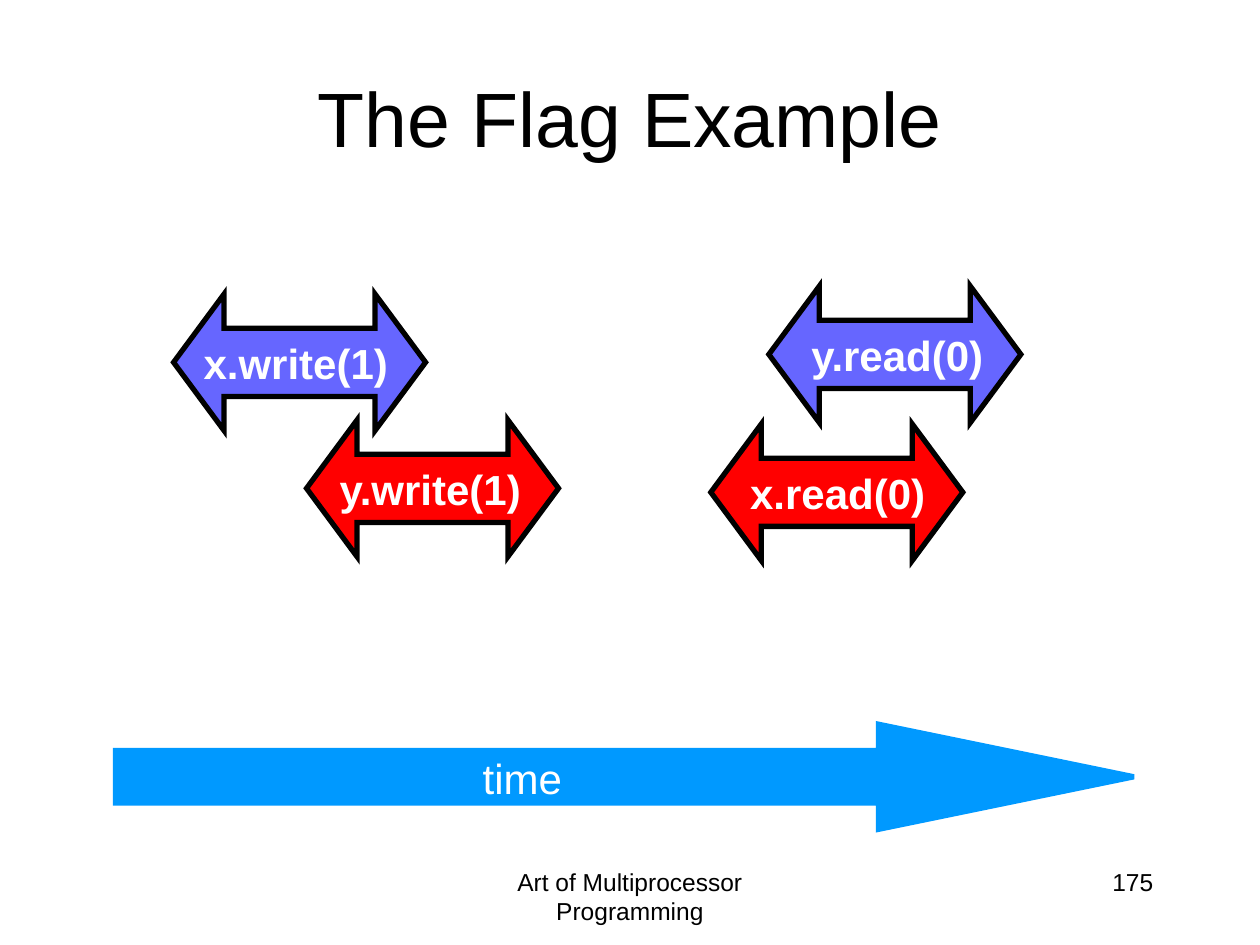
from dataclasses import dataclass

from lxml.etree import SubElement
from pptx import Presentation
from pptx.dml.color import RGBColor as Rgb
from pptx.enum.shapes import MSO_SHAPE as Shape
from pptx.enum.text import MSO_ANCHOR as Anchor, PP_ALIGN as Align
from pptx.oxml.ns import qn
from pptx.util import Cm, Pt


@dataclass(frozen=True)
class Theme:
    font: str = "Arial"
    dark: str = "000000"
    light: str = "FFFFFF"
    blue: str = "6666FF"
    red: str = "FF0000"
    sky: str = "0099FF"
    head: int = 44
    label: int = 24
    foot: int = 14
    edge: int = 3


THEME = Theme()


def place(item, box):
    item.left, item.top, item.width, item.height = map(Cm, box)


def write(item, text, size, color, align, bold=False, wrap=True, anchor=Anchor.TOP):
    frame = item.text_frame
    frame.text = text
    frame.word_wrap = wrap
    frame.vertical_anchor = anchor
    para = frame.paragraphs[0]
    para.alignment = align
    font = para.runs[0].font
    font.name, font.size, font.bold = THEME.font, Pt(size), bold
    font.color.rgb = Rgb.from_string(color)


def add_title(slide, text):
    title = slide.shapes.title
    place(title, (1.27, 0.76, 22.86, 3.18))
    write(title, text, THEME.head, THEME.dark, Align.CENTER, anchor=Anchor.MIDDLE)


def add_text(slide, text, box, size, color, align, wrap=True):
    item = slide.shapes.add_textbox(*map(Cm, box))
    write(item, text, size, color, align, wrap=wrap)


def add_arrow(slide, kind, box, ratios, fill, edge):
    arrow = slide.shapes.add_shape(kind, *map(Cm, box))
    arrow.shadow.inherit = False
    for i, ratio in enumerate(ratios):
        arrow.adjustments[i] = ratio
    arrow.fill.solid()
    arrow.fill.fore_color.rgb = Rgb.from_string(fill)
    arrow.line.color.rgb = Rgb.from_string(edge)
    arrow.line.width = Pt(THEME.edge)
    SubElement(arrow.line._get_or_add_ln(), qn("a:miter"), lim="800000")
    return arrow


def add_call(slide, text, left, top, fill):
    box = (left, top, 5.08, 2.75)
    arrow = add_arrow(slide, Shape.LEFT_RIGHT_ARROW, box, (0.5, 0.37), fill, THEME.dark)
    write(arrow, text, THEME.label, THEME.light, Align.RIGHT, True, False, Anchor.MIDDLE)


def add_time(slide):
    box = (2.33, 14.6, 20.53, 2.12)
    add_arrow(slide, Shape.RIGHT_ARROW, box, (0.5, 2.43), THEME.sky, THEME.sky)
    add_text(slide, "time", (9.45, 15.04, 2.13, 1.28), THEME.label, THEME.light,
             Align.RIGHT, wrap=False)


def main():
    deck = Presentation()
    deck.slide_width, deck.slide_height = Cm(25.4), Cm(19.05)
    slide = deck.slides.add_slide(deck.slide_layouts[5])
    add_title(slide, "The Flag Example")
    calls = (
        ("x.write(1)", 3.5, 5.93, THEME.blue),
        ("y.read(0)", 15.5, 5.77, THEME.blue),
        ("y.write(1)", 6.18, 8.47, THEME.red),
        ("x.read(0)", 14.33, 8.55, THEME.red),
    )
    for call in calls:
        add_call(slide, *call)
    add_time(slide)
    notes = (
        ("Art of Multiprocessor Programming", 8.68, 8.04, Align.CENTER),
        ("175", 18.2, 5.3, Align.RIGHT),
    )
    for text, left, width, align in notes:
        add_text(slide, text, (left, 17.35, width, 1.27), THEME.foot, THEME.dark, align)
    deck.save("out.pptx")


if __name__ == "__main__":
    main()
